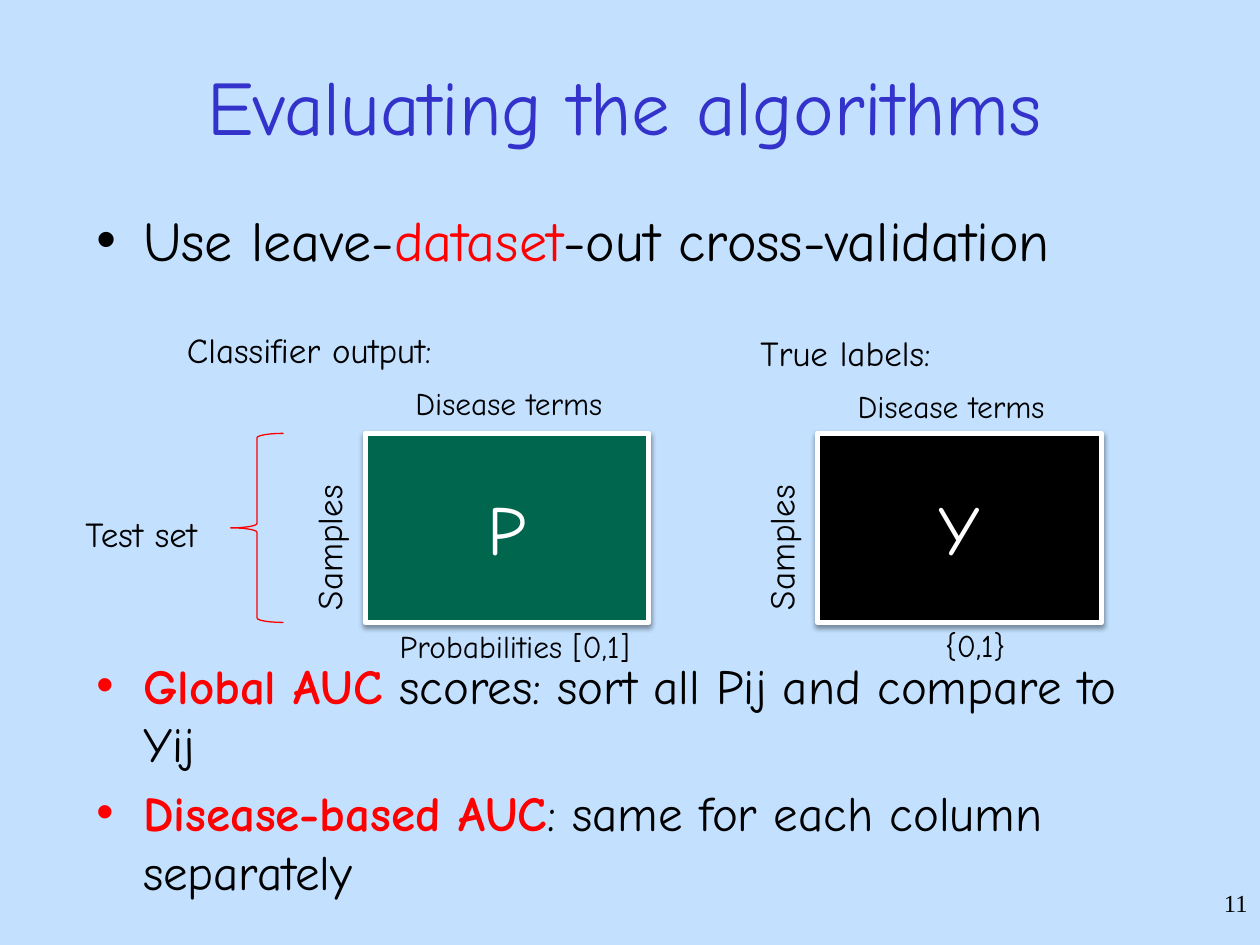
"""Build the slide on evaluating the algorithms with cross-validation."""
from lxml.etree import SubElement
from pptx import Presentation
from pptx.dml.color import RGBColor
from pptx.enum.shapes import MSO_SHAPE
from pptx.enum.text import MSO_ANCHOR, PP_ALIGN
from pptx.oxml.ns import qn
from pptx.util import Inches, Pt

WIDTH, HEIGHT = 10, 7.5
FONT = "Comic Neue"
BLACK, WHITE, RED, BLUE = "000000", "FFFFFF", "FF0000", "3333CC"
LEFT, CENTER, RIGHT = PP_ALIGN.LEFT, PP_ALIGN.CENTER, PP_ALIGN.RIGHT
MARGIN = WIDTH / 15
MATRIX_TOP, MATRIX_WIDTH, MATRIX_HEIGHT = 3.44, 2.25, 1.5
INDENT = 0.37

BULLET_BOXES = [
    (1.58, 0.8, 32, [
        [("Use leave-", BLACK, False), ("dataset", RED, False),
         ("-out cross-validation", BLACK, False)],
    ]),
    (5.15, 2.0, 28, [
        [("Global AUC", RED, True),
         (" scores: sort all Pij and compare to Yij", BLACK, False)],
        [("Disease-based AUC", RED, True),
         (": same for each column separately", BLACK, False)],
    ]),
]
MATRICES = [("P", 2.9, "00664D"), ("Y", 6.49, BLACK)]
LABELS = [
    ("Classifier output:", (0.33, 2.56, 4.25, 0.44), 20, CENTER),
    ("True labels:", (4, 2.58, 5.42, 0.44), 20, CENTER),
    ("Disease terms ", (2.74, 3, 2.68, 0.4), 18, CENTER),
    ("Disease terms ", (6.25, 3.02, 2.68, 0.4), 18, CENTER),
    ("Probabilities [0,1]", (2.92, 4.93, 2.33, 0.4), 18, CENTER),
    ("{0,1}", (6.4, 4.92, 2.68, 0.4), 18, CENTER),
    ("Test set", (0.58, 4.02, 1.17, 0.44), 20, LEFT),
]


def color(value):
    return RGBColor.from_string(value)


def add_run(paragraph, text, size, text_color, name=FONT, bold=False):
    run = paragraph.add_run()
    run.text = text
    run.font.color.rgb = color(text_color)
    for key, value in {"size": Pt(size), "name": name, "bold": bold}.items():
        setattr(run.font, key, value)


def add_box(slide, box):
    shape = slide.shapes.add_textbox(*map(Inches, box))
    shape.text_frame.word_wrap = True
    return shape


def add_label(slide, text, box, size, alignment=LEFT, text_color=BLACK, name=FONT):
    shape = add_box(slide, box)
    paragraph = shape.text_frame.paragraphs[0]
    paragraph.alignment = alignment
    add_run(paragraph, text, size, text_color, name)
    return shape


def add_bullets(slide, top, height, size, items):
    frame = add_box(slide, (MARGIN, top, 8.75, height)).text_frame
    for index, runs in enumerate(items):
        paragraph = frame.add_paragraph() if index else frame.paragraphs[0]
        properties = paragraph._p.get_or_add_pPr()
        properties.set("marL", str(Inches(INDENT)))
        properties.set("indent", str(-Inches(INDENT)))
        SubElement(properties, qn("a:buFont"), typeface="Arial")
        SubElement(properties, qn("a:buChar"), char="•")
        if index:
            paragraph.space_before = Pt(size * 0.2)
        for text, text_color, bold in runs:
            add_run(paragraph, text, size, text_color, bold=bold)


def add_outlined(slide, preset, box, line_color, line_width):
    shape = slide.shapes.add_shape(preset, *map(Inches, box))
    shape.shadow.inherit = False
    shape.line.color.rgb = color(line_color)
    shape.line.width = Pt(line_width)
    return shape


def add_matrix(slide, letter, left, fill):
    box = (left, MATRIX_TOP, MATRIX_WIDTH, MATRIX_HEIGHT)
    shape = add_outlined(slide, MSO_SHAPE.RECTANGLE, box, WHITE, 3)
    shape.fill.solid()
    shape.fill.fore_color.rgb = color(fill)
    effects = shape._element.spPr.find(qn("a:effectLst"))
    shadow = SubElement(effects, qn("a:outerShdw"), blurRad=str(Pt(3.1)),
                        dist=str(Pt(1.6)), dir="5400000", rotWithShape="0")
    shade = SubElement(shadow, qn("a:srgbClr"), val=BLACK)
    SubElement(shade, qn("a:alpha"), val="38000")
    shape.text_frame.vertical_anchor = MSO_ANCHOR.MIDDLE
    paragraph = shape.text_frame.paragraphs[0]
    paragraph.alignment = CENTER
    add_run(paragraph, letter, 40, WHITE)
    side = add_label(slide, "Samples", (left - 1, 4.01, 1.42, 0.44), 20)
    side.rotation = 270


def main():
    presentation = Presentation()
    presentation.slide_width, presentation.slide_height = Inches(WIDTH), Inches(HEIGHT)
    slide = presentation.slides.add_slide(presentation.slide_layouts[6])
    slide.background.fill.solid()
    slide.background.fill.fore_color.rgb = color("C3E1FF")

    title = add_label(slide, "Evaluating the algorithms", (MARGIN, 0.5, 8.58, 0.67),
                      44, CENTER, BLUE)
    title.text_frame.vertical_anchor = MSO_ANCHOR.MIDDLE
    for bullets in BULLET_BOXES:
        add_bullets(slide, *bullets)
    for matrix in MATRICES:
        add_matrix(slide, *matrix)
    brace = add_outlined(slide, MSO_SHAPE.LEFT_BRACE,
                         (1.83, MATRIX_TOP, 0.42, MATRIX_HEIGHT), RED, 0.75)
    brace.fill.background()
    for label in LABELS:
        add_label(slide, *label)
    add_label(slide, "11", (7.92, 7, 2.08, 0.5), 14, RIGHT, name="Times New Roman")
    presentation.save("out.pptx")


if __name__ == "__main__":
    main()
